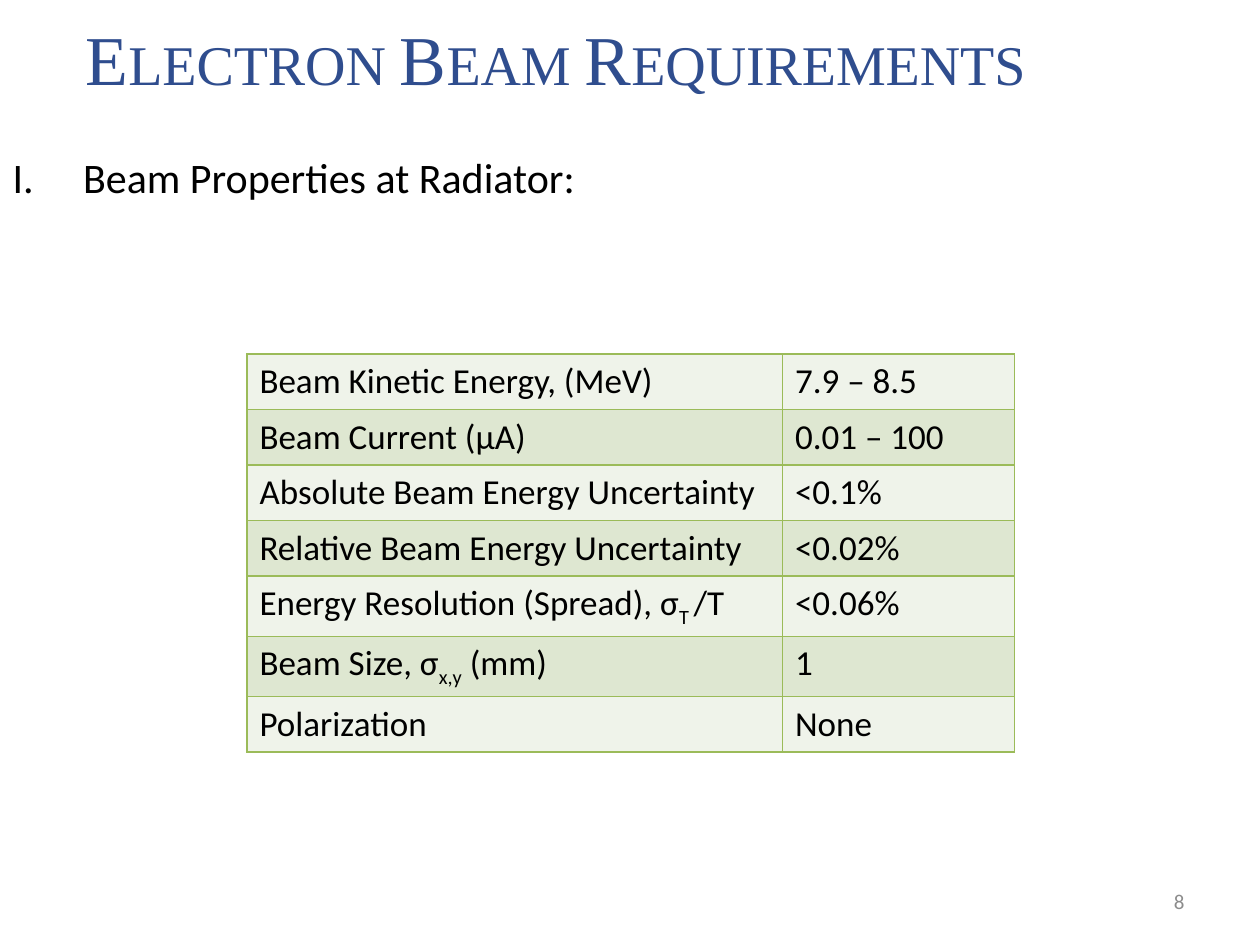
"""Build the electron beam requirements slide."""
from lxml import etree
from pptx import Presentation
from pptx.dml.color import RGBColor
from pptx.enum.text import MSO_ANCHOR, MSO_AUTO_SIZE, PP_ALIGN
from pptx.oxml.ns import qn
from pptx.util import Inches, Pt

LEFT, RIGHT = PP_ALIGN.LEFT, PP_ALIGN.RIGHT
MIDDLE, NO_FIT = MSO_ANCHOR.MIDDLE, MSO_AUTO_SIZE.NONE
BLUE = RGBColor(0x2F, 0x4D, 0x8E)
BLACK = RGBColor(0x00, 0x00, 0x00)
GRAY = RGBColor(0x8C, 0x8C, 0x8C)
GREEN = RGBColor(0x9B, 0xBB, 0x59)
BANDS = (RGBColor(0xEF, 0xF3, 0xEA), RGBColor(0xDE, 0xE7, 0xD1))

TITLE = {"name": "Times New Roman", "size": Pt(40)}
BODY = {"name": "Calibri", "size": Pt(24)}
CELL = {"name": "Calibri", "size": Pt(20)}
NUMBER = {"name": "Calibri", "size": Pt(12)}

ROWS = [
    (["Beam Kinetic Energy, (MeV)"], ["7.9 – 8.5"]),
    (["Beam Current (µA)"], ["0.01 – 100"]),
    (["Absolute Beam Energy Uncertainty"], ["<0.1%"]),
    (["Relative Beam Energy Uncertainty"], ["<0.02%"]),
    (["Energy Resolution (Spread), σ", "T ", "/T"], ["<0.06%"]),
    (["Beam Size, σ", "x,y", " (mm)"], ["1"]),
    (["Polarization"], ["None"]),
]


def add_run(p, text, style, color):
    r = p.add_run()
    r.text = text
    for key, value in style.items():
        setattr(r.font, key, value)
    r.font.color.rgb = color
    return r


def add_border(cell, side):
    ln = etree.SubElement(cell._tc.get_or_add_tcPr(), qn(f"a:{side}"), w=str(Pt(1)))
    fill = etree.SubElement(ln, qn("a:solidFill"))
    etree.SubElement(fill, qn("a:srgbClr"), val=str(GREEN))


prs = Presentation()
prs.slide_width, prs.slide_height = Inches(10), Inches(7.5)
s = prs.slides.add_slide(prs.slide_layouts[1])
title, body = s.placeholders

title.left, title.top = Inches(0.58), Inches(0)
title.width, title.height = Inches(9), Inches(0.92)
title.text_frame.auto_size = NO_FIT
p = title.text_frame.paragraphs[0]
p.alignment = LEFT
r = add_run(p, "Electron Beam Requirements", TITLE, BLUE)
r.font._element.set("cap", "small")

body.left, body.top = Inches(0), Inches(1.15)
body.width, body.height = Inches(10), Inches(6.35)
body.text_frame.auto_size = NO_FIT
p = body.text_frame.paragraphs[0]
add_run(p, "Beam Properties at Radiator:", BODY, BLACK)
pPr = p._p.get_or_add_pPr()
pPr.set("marL", str(Inches(0.56)))
pPr.set("indent", str(-Inches(0.56)))
etree.SubElement(pPr, qn("a:buFont"), typeface="+mj-lt")
etree.SubElement(pPr, qn("a:buAutoNum"), type="romanUcPeriod")

table = s.shapes.add_table(len(ROWS), 2, Inches(1.96), Inches(2.81),
                           Inches(6.08), Inches(3.03)).table
table.first_row = table.horz_banding = False
for column, width in zip(table.columns, (4.25, 1.84)):
    column.width = Inches(width)
for i, row in enumerate(ROWS):
    for j, parts in enumerate(row):
        cell = table.cell(i, j)
        for side in ("lnL", "lnR", "lnT", "lnB"):
            add_border(cell, side)
        cell.fill.solid()
        cell.fill.fore_color.rgb = BANDS[i % 2]
        p = cell.text_frame.paragraphs[0]
        for k, text in enumerate(parts):
            r = add_run(p, text, CELL, BLACK)
            if k % 2:
                r.font._element.set("baseline", "-25000")

sp = s.shapes.add_textbox(Inches(7.17), Inches(6.95), Inches(2.33), Inches(0.4))
tf = sp.text_frame
tf.word_wrap = True
tf.vertical_anchor = MIDDLE
p = tf.paragraphs[0]
p.alignment = RIGHT
add_run(p, "8", NUMBER, GRAY)

prs.save("out.pptx")
